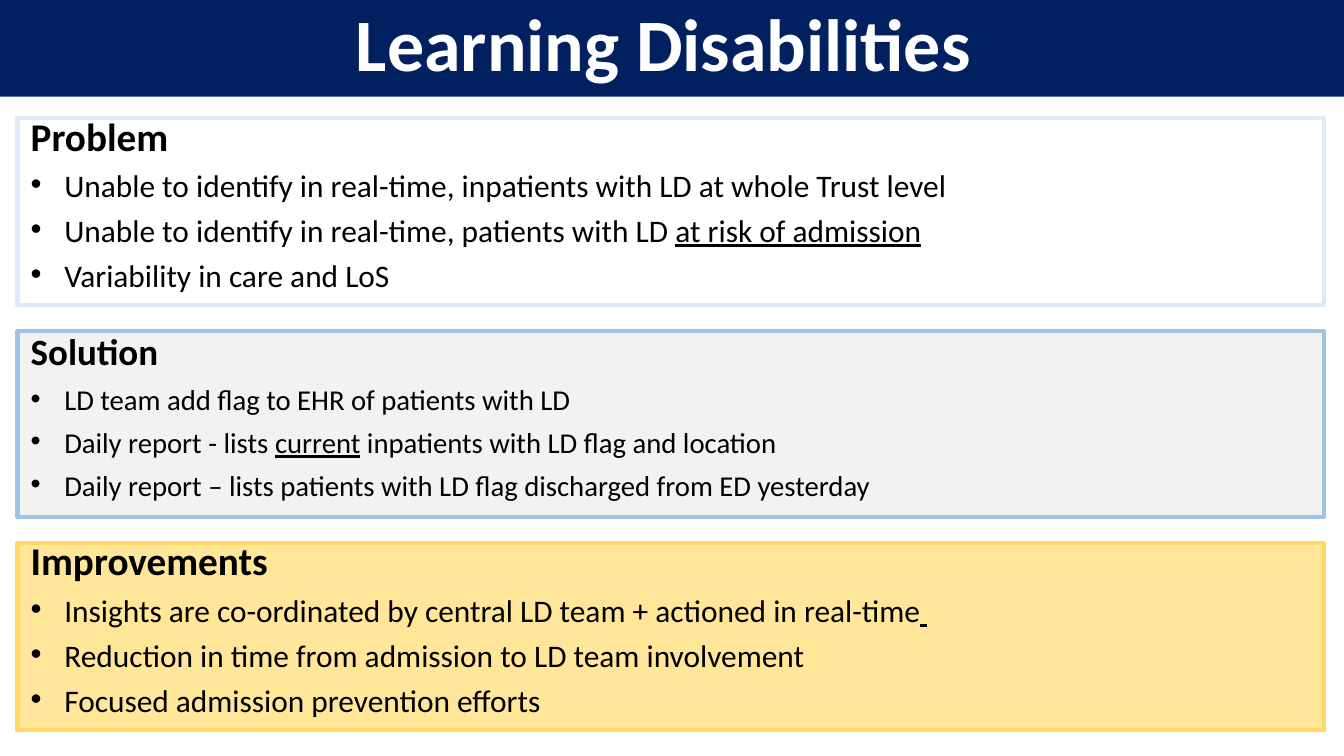
from lxml.etree import SubElement
from pptx import Presentation
from pptx.dml.color import RGBColor
from pptx.enum.shapes import MSO_SHAPE
from pptx.enum.text import MSO_ANCHOR, MSO_AUTO_SIZE, PP_ALIGN
from pptx.oxml.ns import qn
from pptx.util import Inches, Pt

FONT = "Calibri"
COLORS = {
    "navy": "002060", "white": "FFFFFF", "black": "000000",
    "pale_blue": "DEEBF7", "blue": "9DC3E6", "grey": "F2F2F2",
    "yellow": "FFE699", "gold": "FFD966",
}
SLIDE_WIDTH = Inches(10)
SLIDE_HEIGHT = SLIDE_WIDTH * 9 // 16
LEFT, TOP, WIDTH, HEIGHT, ROW_STEP = 0.13, 0.88, 9.72, 1.39, 1.58
INDENT = 0.25

# Each bullet is a list of (text, font overrides).
PANELS = [
    {"heading": "Problem", "fill": "white", "line": "pale_blue",
     "sizes": (21, 16.8), "heading_spacing": 0.7,
     "bullets": [
         [("Unable to identify in real-time, inpatients with LD at whole Trust level", {})],
         [("Unable to identify in real-time, patients with LD ", {}),
          ("at risk of admission", {"underline": True})],
         [("Variability in care and LoS", {})]]},
    {"heading": "Solution", "fill": "grey", "line": "blue",
     "sizes": (19.8, 15.4), "heading_spacing": 0.8,
     "bullets": [
         [("LD team add flag to EHR of patients with LD", {})],
         [("Daily report - lists ", {}), ("current", {"underline": True}),
          (" inpatients with LD flag and location", {})],
         [("Daily report – lists patients with LD flag discharged from ED yesterday", {})]]},
    {"heading": "Improvements", "fill": "yellow", "line": "gold",
     "sizes": (21, 16.8), "heading_spacing": 0.7,
     "bullets": [
         [("Insights are co-ordinated by central LD team + actioned in real-time", {}),
          (" ", {"bold": True, "underline": True})],
         [("Reduction in time from admission to LD team involvement", {})],
         [("Focused admission prevention efforts", {})]]},
]


def rgb(name):
    return RGBColor.from_string(COLORS[name])


def apply(obj, values):
    for name, value in values.items():
        setattr(obj, name, value)


def fill_solid(shape, color):
    shape.fill.solid()
    shape.fill.fore_color.rgb = rgb(color)


def add_run(p, text, color, **font):
    r = p.add_run()
    r.text = text
    apply(r.font, {"name": FONT, **font})
    r.font.color.rgb = rgb(color)


def add_bullet_mark(p):
    pPr = p._p.get_or_add_pPr()
    pPr.set("marL", str(Inches(INDENT)))
    pPr.set("indent", str(-Inches(INDENT)))
    SubElement(pPr, qn("a:buFont"), typeface="Arial")
    SubElement(pPr, qn("a:buChar"), char="•")


def format_title(s):
    title = s.shapes.title
    apply(title, {"left": 0, "top": Inches(-0.01),
                  "width": SLIDE_WIDTH, "height": Inches(0.73)})
    fill_solid(title, "navy")
    tf = title.text_frame
    apply(tf, {"word_wrap": True, "auto_size": MSO_AUTO_SIZE.NONE,
               "vertical_anchor": MSO_ANCHOR.MIDDLE})
    p = tf.paragraphs[0]
    apply(p, {"alignment": PP_ALIGN.CENTER, "line_spacing": 0.9})
    add_run(p, "Learning Disabilities ", "white", size=Pt(39.6), bold=True)


def add_panel(s, row, panel):
    sp = s.shapes.add_shape(
        MSO_SHAPE.RECTANGLE, Inches(LEFT), Inches(TOP + row * ROW_STEP),
        Inches(WIDTH), Inches(HEIGHT))
    sp.shadow.inherit = False
    fill_solid(sp, panel["fill"])
    sp.line.color.rgb = rgb(panel["line"])
    sp.line.width = Pt(2.25)

    tf = sp.text_frame
    apply(tf, {"word_wrap": True, "vertical_anchor": MSO_ANCHOR.TOP})
    heading_size, bullet_size = panel["sizes"]
    paragraph = {"alignment": PP_ALIGN.LEFT, "space_before": Pt(10)}

    p = tf.paragraphs[0]
    apply(p, {**paragraph, "line_spacing": panel["heading_spacing"]})
    add_run(p, panel["heading"], "black", size=Pt(heading_size), bold=True)
    for bullet in panel["bullets"]:
        p = tf.add_paragraph()
        apply(p, {**paragraph, "line_spacing": 0.7})
        add_bullet_mark(p)
        for text, font in bullet:
            add_run(p, text, "black", size=Pt(bullet_size), **font)


def main():
    prs = Presentation()
    apply(prs, {"slide_width": SLIDE_WIDTH, "slide_height": SLIDE_HEIGHT})
    s = prs.slides.add_slide(prs.slide_layouts[5])
    format_title(s)
    for row, panel in enumerate(PANELS):
        add_panel(s, row, panel)
    prs.save("out.pptx")


if __name__ == "__main__":
    main()
